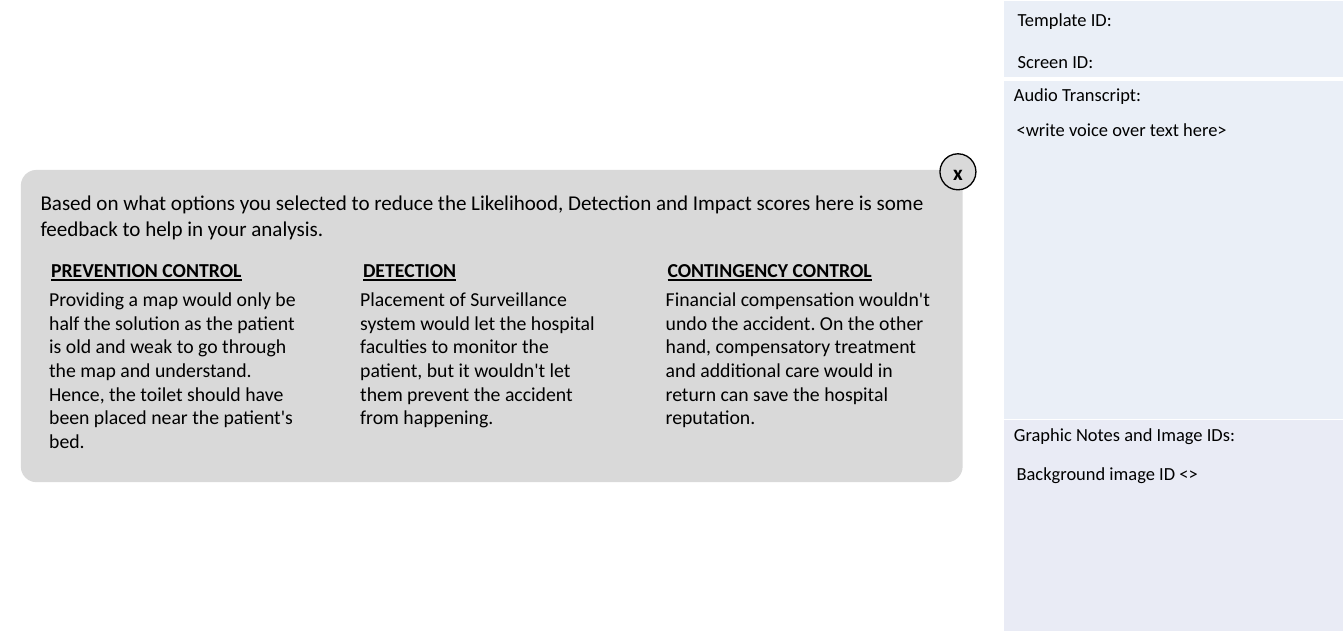
from lxml.etree import SubElement
from pptx import Presentation
from pptx.dml.color import RGBColor
from pptx.enum.shapes import MSO_SHAPE
from pptx.enum.text import MSO_ANCHOR, PP_ALIGN
from pptx.oxml.ns import qn
from pptx.util import Emu, Pt

PX = 9144  # 100 px to the inch
COLORS = {"text": "000000", "panel": "D9D9D9", "border": "FFFFFF",
          "sidebar": "EAEFF7", "sidebar_notes": "E9EBF5"}


def color(name):
    return RGBColor.from_string(COLORS[name])


def write(frame, text, size=14, bold=False, underline=False,
          align=PP_ALIGN.LEFT, anchor=MSO_ANCHOR.TOP, insets=(10, 5, 10, 5)):
    """Fill a text frame; insets are left, top, right, bottom in px."""
    frame.word_wrap = True
    frame.vertical_anchor = anchor
    (frame.margin_left, frame.margin_top,
     frame.margin_right, frame.margin_bottom) = [Emu(inset * PX) for inset in insets]
    para = frame.paragraphs[0]
    para.alignment = align
    span = para.add_run()
    span.text = text
    font = span.font
    font.name, font.size, font.bold, font.underline = "Calibri", Pt(size), bold, underline
    font.color.rgb = color("text")


deck = Presentation()
deck.slide_width, deck.slide_height = Emu(1417 * PX), Emu(669 * PX)
page = deck.slides.add_slide(deck.slide_layouts[6])
shapes = page.shapes

# Sidebar table: text, row height, fill, bottom border in points
sidebar_rows = [
    ("", 83, "sidebar", 3),
    ("Audio Transcript:", 359, "sidebar", 1),
    ("Graphic Notes and Image IDs:", 223, "sidebar_notes", 1),
]
sidebar = shapes.add_table(3, 1, 1058 * PX, 0, 359 * PX, 665 * PX).table
sidebar.first_row = sidebar.horz_banding = False
top_border = 1
for index, (text, height, fill, bottom_border) in enumerate(sidebar_rows):
    sidebar.rows[index].height = Emu(height * PX)
    cell = sidebar.cell(index, 0)
    cell.fill.solid()
    cell.fill.fore_color.rgb = color(fill)
    if text:
        write(cell.text_frame, text)
    cell.margin_left = cell.margin_right = Emu(11 * PX)
    cell.margin_top = cell.margin_bottom = Emu(5 * PX)
    properties = cell._tc.get_or_add_tcPr()
    borders = {"a:lnL": 1, "a:lnR": 1, "a:lnT": top_border, "a:lnB": bottom_border}
    for order, (tag, width) in enumerate(borders.items()):
        line = SubElement(properties, qn(tag), w=str(Pt(width)))
        SubElement(SubElement(line, qn("a:solidFill")), qn("a:srgbClr"), val=COLORS["border"])
        properties.insert(order, line)
    top_border = bottom_border

sidebar_labels = [
    ("Screen ID:", 1063, 48, 382),
    ("Template ID:", 1063, 4, 382),
    ("<write voice over text here>", 1062, 119, 356),
    ("Background image ID <>", 1062, 482, 356),
]
for text, left, top, width in sidebar_labels:
    box = shapes.add_textbox(left * PX, top * PX, width * PX, 34 * PX)
    write(box.text_frame, text)

# Feedback panel and its close button
panel = shapes.add_shape(MSO_SHAPE.ROUNDED_RECTANGLE, 22 * PX, 179 * PX, 993 * PX, 329 * PX)
panel.adjustments[0] = 0.05
panel.line.fill.background()
write(panel.text_frame,
      "Based on what options you selected to reduce the Likelihood, Detection and Impact "
      "scores here is some feedback to help in your analysis.",
      size=16, insets=(16, 16, 31, 16))

close_button = shapes.add_shape(MSO_SHAPE.OVAL, 991 * PX, 162 * PX, 38 * PX, 38 * PX)
close_button.line.color.rgb = color("text")
close_button.line.width = Pt(1)
write(close_button.text_frame, "x", size=16, bold=True, align=PP_ALIGN.CENTER,
      anchor=MSO_ANCHOR.MIDDLE, insets=(0, 0, 0, 0))

for shape in (panel, close_button):
    shape.shadow.inherit = False
    shape.fill.solid()
    shape.fill.fore_color.rgb = color("panel")

# Feedback columns: heading, heading left, body left, body width, body height, body
feedback_columns = [
    ("PREVENTION CONTROL", 44, 42, 280, 187,
     "Providing a map would only be half the solution as the patient is old and weak to go "
     "through the map and understand. Hence, the toilet should have been placed near the "
     "patient's bed."),
    ("DETECTION", 373, 370, 280, 162,
     "Placement of Surveillance system would let the hospital faculties to monitor the "
     "patient, but it wouldn't let them prevent the accident from happening."),
    ("CONTINGENCY CONTROL", 694, 692, 299, 162,
     "Financial compensation wouldn't undo the accident. On the other hand, compensatory "
     "treatment and additional care would in return can save the hospital reputation."),
]
for heading, heading_left, body_left, body_width, body_height, body in feedback_columns:
    body_box = shapes.add_textbox(body_left * PX, 297 * PX, body_width * PX, body_height * PX)
    write(body_box.text_frame, body, size=15)
    heading_box = shapes.add_textbox(heading_left * PX, 267 * PX, 280 * PX, 35 * PX)
    write(heading_box.text_frame, heading, size=15, bold=True, underline=True)

deck.save("out.pptx")
